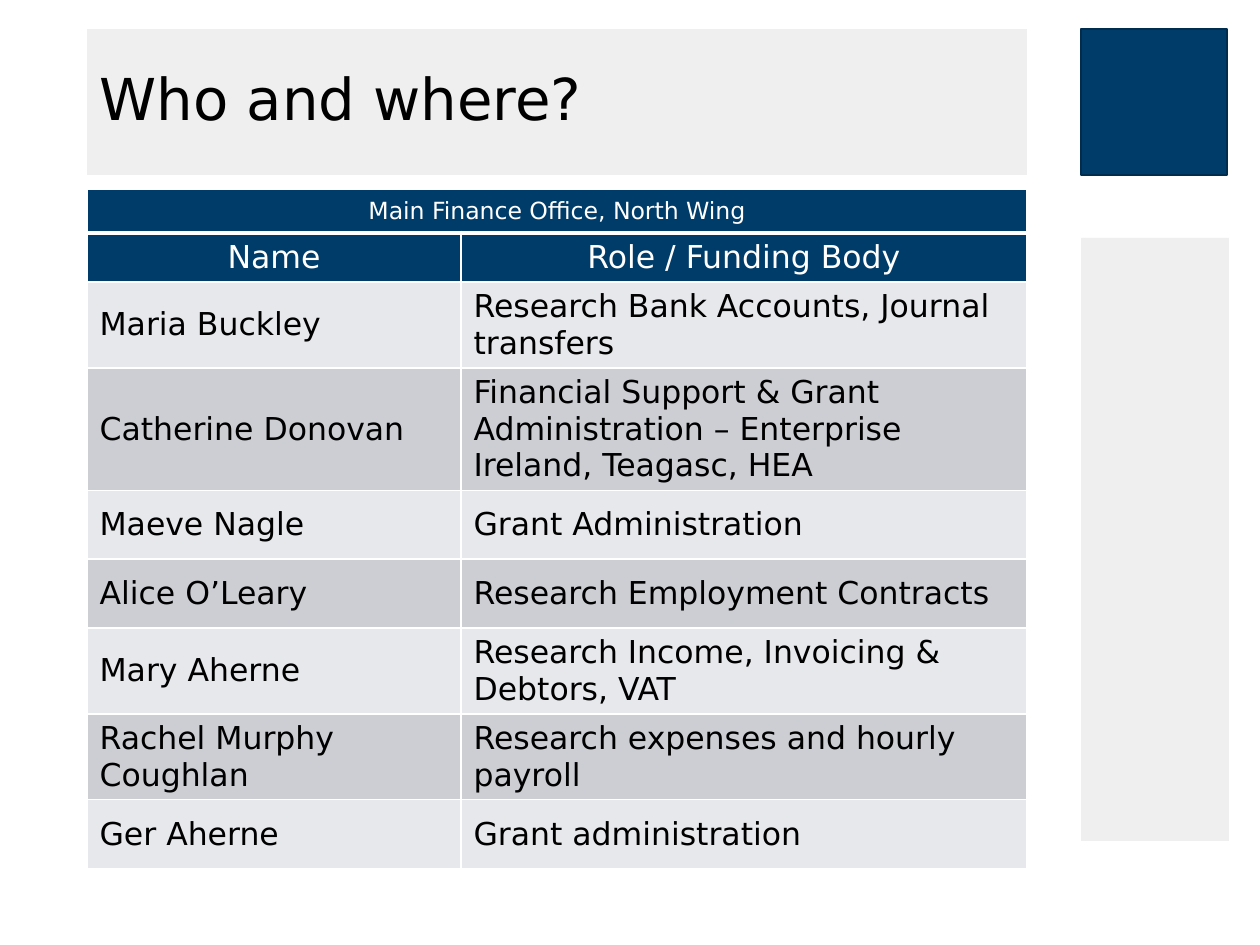
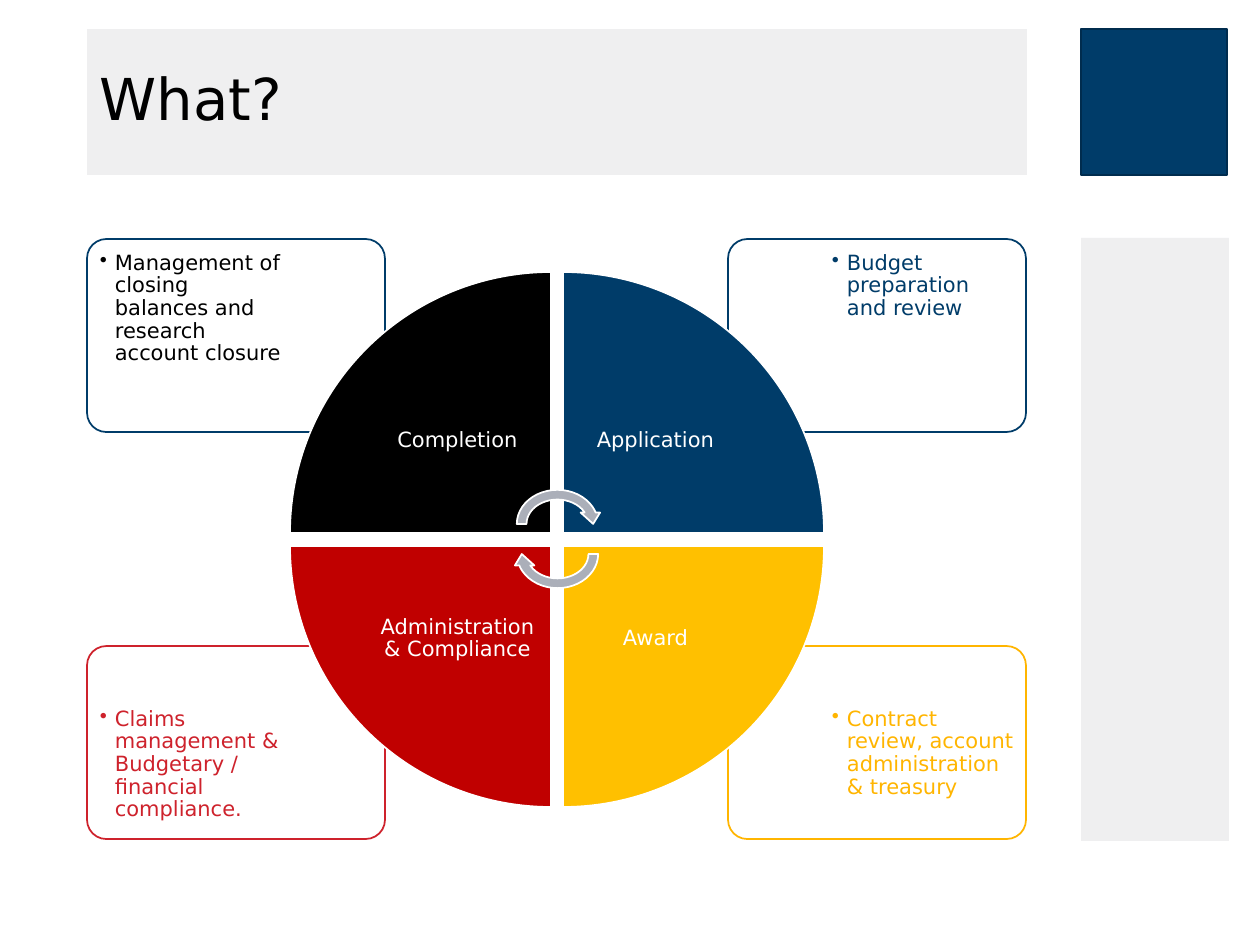
from lxml.etree import SubElement
from pptx import Presentation
from pptx.dml.color import RGBColor
from pptx.enum.shapes import MSO_SHAPE
from pptx.enum.text import MSO_ANCHOR, PP_ALIGN
from pptx.oxml.ns import qn
from pptx.util import Emu, Pt

PX = 914400 / 126
FONT = "DejaVu Sans"
HUES = {
    "white": "FFFFFF", "black": "000000", "navy": "003C69", "edge": "002C4E",
    "panel": "EFEFF0", "light": "E7E8EB", "dark": "CCCED4", "gold": "FFC000",
    "amber": "FFB500", "red": "C00000", "rose": "CE222C", "grey": "ABAFB9",
}
HUES = {name: RGBColor.from_string(code) for name, code in HUES.items()}


def write(frame, text, size=12, hue="white", align=PP_ALIGN.LEFT,
          anchor=MSO_ANCHOR.MIDDLE, space=None, inset=None, bullet=False):
    frame.word_wrap = True
    frame.vertical_anchor = anchor
    if inset is not None:
        frame.margin_left = frame.margin_right = Emu(int(inset * PX))
        frame.margin_top = frame.margin_bottom = Emu(int(inset * PX))
    para = frame.paragraphs[0]
    para.text = text
    para.alignment = align
    if space:
        para.line_spacing = space
    if bullet:
        para.level = 1
        props = para._p.get_or_add_pPr()
        props.set("marL", str(int(15 * PX)))
        props.set("indent", str(int(-15 * PX)))
        SubElement(props, qn("a:buChar")).set("char", "•")
    font = para.runs[0].font
    font.name = FONT
    font.size = Pt(size)
    font.bold = False
    font.color.rgb = HUES[hue]


def draw(slide, kind, place, fill, line=None, turn=0):
    shape = slide.shapes.add_shape(kind, *[Emu(int(n * PX)) for n in place])
    shape.shadow.inherit = False
    shape.rotation = turn
    shape.fill.solid()
    shape.fill.fore_color.rgb = HUES[fill]
    if line:
        shape.line.color.rgb = HUES[line]
        shape.line.width = Pt(1)
    else:
        shape.line.fill.background()
    return shape


deck = Presentation()
deck.slide_width = Emu(int(1260 * PX))
deck.slide_height = Emu(int(945 * PX))

slides = []
for name in ("Who and where?", "What?"):
    slide = deck.slides.add_slide(deck.slide_layouts[5])
    draw(slide, MSO_SHAPE.RECTANGLE, (1081, 238, 148, 603), "panel")
    draw(slide, MSO_SHAPE.RECTANGLE, (1081, 29, 146, 146), "navy", "edge")
    title = slide.shapes.title
    title.left, title.top, title.width, title.height = [
        Emu(int(n * PX)) for n in (87, 29, 940, 146)]
    title.fill.solid()
    title.fill.fore_color.rgb = HUES["panel"]
    write(title.text_frame, name, size=33, hue="black", space=0.9)
    slides.append(slide)
staff, cycle = slides

rows = [
    ("Main Finance Office, North Wing", ""),
    ("Name", "Role / Funding Body"),
    ("Maria Buckley", "Research Bank Accounts, Journal transfers"),
    ("Catherine Donovan", "Financial Support & Grant Administration – Enterprise Ireland, Teagasc, HEA"),
    ("Maeve Nagle", "Grant Administration"),
    ("Alice O’Leary", "Research Employment Contracts"),
    ("Mary Aherne", "Research Income, Invoicing & Debtors, VAT"),
    ("Rachel Murphy Coughlan", "Research expenses and hourly payroll"),
    ("Ger Aherne", "Grant administration"),
]
place = [Emu(int(n * PX)) for n in (87, 189, 940, 575)]
table = staff.shapes.add_table(len(rows), 2, *place).table
table.first_row = table.horz_banding = False
for col, width in zip(table.columns, (374, 566)):
    col.width = Emu(int(width * PX))
table.cell(0, 0).merge(table.cell(0, 1))
for r, row in enumerate(rows):
    head = r < 2
    table.rows[r].height = Emu(int((44 if head else 69) * PX))
    for c, text in enumerate(row):
        cell = table.cell(r, c)
        props = cell._tc.get_or_add_tcPr()
        for side in "LRTB":
            thick = (r, side) in ((0, "B"), (1, "T"))
            line = SubElement(props, qn("a:ln" + side))
            line.set("w", str(Pt(3 if thick else 1)))
            paint = SubElement(line, qn("a:solidFill"))
            SubElement(paint, qn("a:srgbClr")).set("val", str(HUES["white"]))
        cell.fill.solid()
        cell.fill.fore_color.rgb = HUES["navy" if head else ("light", "dark")[r % 2]]
        cell.vertical_anchor = MSO_ANCHOR.MIDDLE
        if text:
            write(cell.text_frame, text, size=18 if r else 13.5,
                  hue="white" if head else "black",
                  align=PP_ALIGN.CENTER if head else PP_ALIGN.LEFT)

parts = [
    ("Completion", "black", "Management of closing balances and research account closure",
     "navy", "black", 0, 0),
    ("Application", "navy", "Budget preparation and review", "navy", "navy", 1, 0),
    ("Award", "gold", "Contract review, account administration & treasury",
     "amber", "amber", 1, 1),
    ("Administration & Compliance", "red",
     "Claims management & Budgetary / financial compliance.", "rose", "rose", 0, 1),
]
for label, fill, note, edge, ink, x, y in reversed(parts):
    box = draw(cycle, MSO_SHAPE.ROUNDED_RECTANGLE,
               ((87, 728)[x], (239, 646)[y], 298, 193), "white", edge)
    box.adjustments[0] = 0.1
    paint = box._element.spPr.find(qn("a:solidFill"))[0]
    SubElement(paint, qn("a:alpha")).set("val", "90000")
    place = ((91, 823)[x], (243, 699)[y], 200, 136)
    text = cycle.shapes.add_textbox(*[Emu(int(n * PX)) for n in place])
    write(text.text_frame, note, hue=ink, anchor=MSO_ANCHOR.TOP,
          space=0.9, inset=9, bullet=True)

for i, (label, fill, note, edge, ink, x, y) in enumerate(parts):
    draw(cycle, MSO_SHAPE.PIE_WEDGE, ((290, 563)[x], (272, 546)[y], 261, 261),
         fill, "white", 90 * i)
    place = ((365, 563)[x], (348, 546)[y], 185, 185)
    text = cycle.shapes.add_textbox(*[Emu(int(n * PX)) for n in place])
    write(text.text_frame, label, align=PP_ALIGN.CENTER, space=0.9, inset=11)

for top, turn in ((485, 0), (515, 180)):
    draw(cycle, MSO_SHAPE.CIRCULAR_ARROW, (512, top, 91, 78), "grey", "white", turn)

deck.save("out.pptx")
